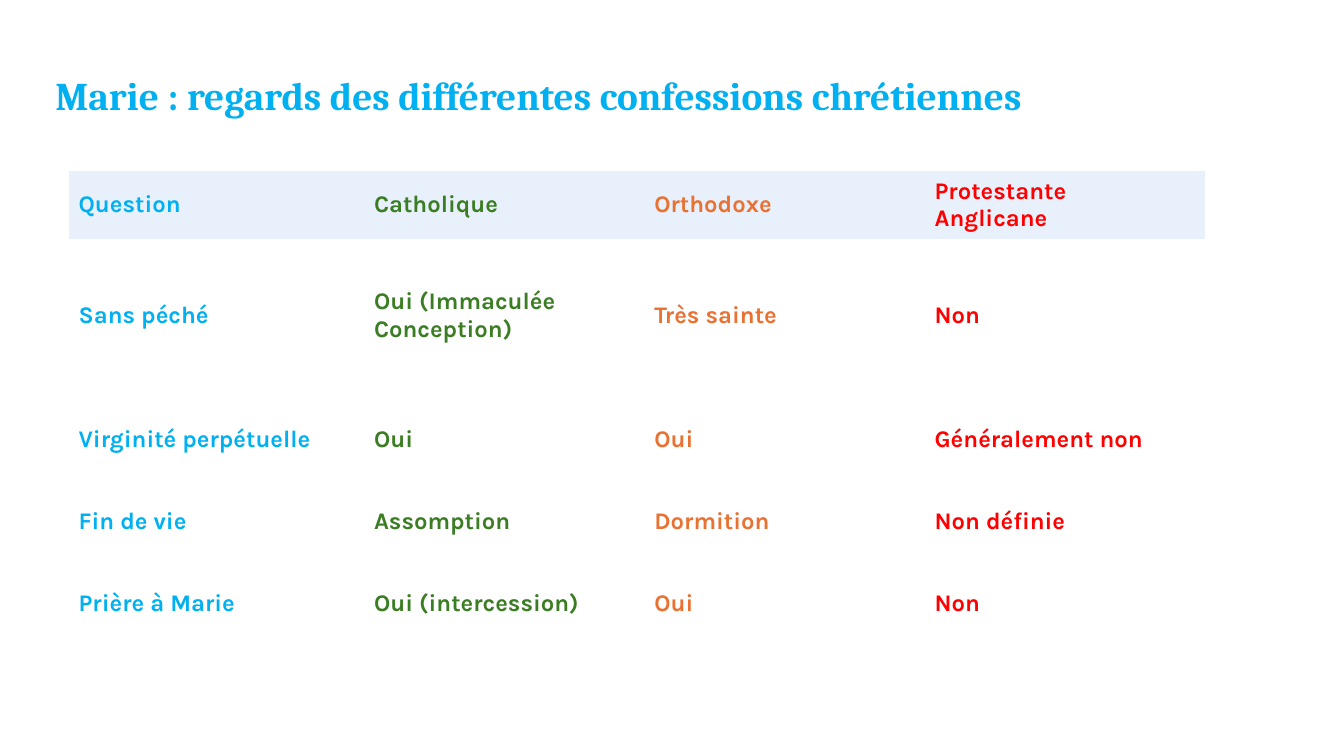
"""Build a slide comparing Christian views of Mary in a table."""
import pptx
import pptx.dml.color
import pptx.enum.text
import pptx.util

Inches = pptx.util.Inches

TITLE = "Marie : regards des différentes confessions chrétiennes"
ROWS = [
    ("Question", "Catholique", "Orthodoxe", "Protestante\nAnglicane"),
    ("Sans péché", "Oui (Immaculée Conception)", "Très sainte", "Non"),
    ("Virginité perpétuelle", "Oui", "Oui", "Généralement non"),
    ("Fin de vie", "Assomption", "Dormition", "Non définie"),
    ("Prière à Marie", "Oui (intercession)", "Oui", "Non"),
]
COLUMN_WIDTHS = (2.93, 2.78, 2.78, 2.78)
ROW_HEIGHTS = (0.67, 1.52, 0.95, 0.67, 0.95)
TITLE_AREA = (0.45, 0.4, 12.52, 1.15)
TABLE_ORIGIN = (0.68, 1.7)

THEME = {
    "title": {"font": "Cambria", "size": 28, "color": "00B0F0", "spacing": 0.9},
    "cell": {"font": "Karla", "size": 17},
    "columns": ("00B0F0", "3B7D23", "E97132", "FF0000"),
    "header_fill": "E7F0FB",
    "plain_table": "{2D5ABB26-0587-4C30-8999-92F81FD0307C}",
}


def rgb(value):
    return pptx.dml.color.RGBColor.from_string(value)


def write(frame, text, *, font, size, color, spacing=None):
    frame.word_wrap = True
    for index, line in enumerate(text.split("\n")):
        para = frame.add_paragraph() if index else frame.paragraphs[0]
        if spacing:
            para.line_spacing = spacing
        span = para.add_run()
        span.text = line
        span.font.name = font
        span.font.size = pptx.util.Pt(size)
        span.font.bold = True
        span.font.color.rgb = rgb(color)


def add_title(page):
    box = page.shapes.add_textbox(*map(Inches, TITLE_AREA))
    box.text_frame.vertical_anchor = pptx.enum.text.MSO_ANCHOR.MIDDLE
    write(box.text_frame, TITLE, **THEME["title"])


def add_comparison(page):
    area = (*TABLE_ORIGIN, sum(COLUMN_WIDTHS), sum(ROW_HEIGHTS))
    frame = page.shapes.add_table(len(ROWS), len(COLUMN_WIDTHS), *map(Inches, area))
    table = frame.table
    table.horz_banding = False
    table._tbl.tblPr.find(pptx.oxml.ns.qn("a:tableStyleId")).text = THEME["plain_table"]
    for column, width in zip(table.columns, COLUMN_WIDTHS):
        column.width = Inches(width)
    for row, height in zip(table.rows, ROW_HEIGHTS):
        row.height = Inches(height)
    for row_index, texts in enumerate(ROWS):
        for column_index, text in enumerate(texts):
            cell = table.cell(row_index, column_index)
            cell.vertical_anchor = pptx.enum.text.MSO_ANCHOR.MIDDLE
            if row_index == 0:
                cell.fill.solid()
                cell.fill.fore_color.rgb = rgb(THEME["header_fill"])
            else:
                cell.fill.background()
            color = THEME["columns"][column_index]
            write(cell.text_frame, text, color=color, **THEME["cell"])


def main():
    deck = pptx.Presentation()
    deck.slide_width = Inches(13.33)
    deck.slide_height = Inches(7.5)
    page = deck.slides.add_slide(deck.slide_layouts[6])
    add_title(page)
    add_comparison(page)
    deck.save("out.pptx")


if __name__ == "__main__":
    main()
